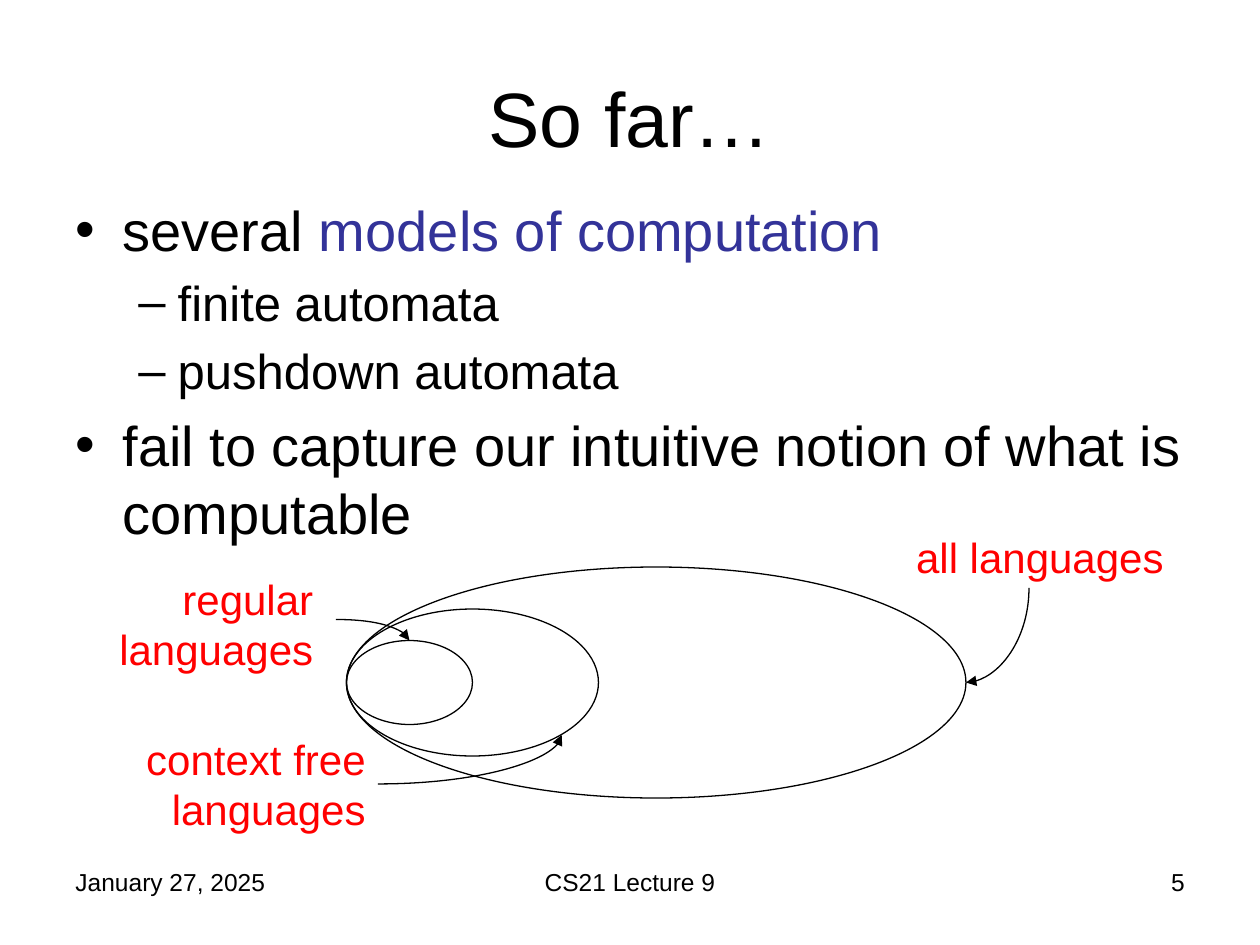
from dataclasses import dataclass

from lxml import etree
from pptx import Presentation
from pptx import util as u
from pptx.dml.color import RGBColor
from pptx.enum import shapes, text
from pptx.oxml import ns


@dataclass(frozen=True)
class Theme:
    font: str = "Arial"
    ink: str = "000000"
    accent: str = "333399"
    label: str = "FF0000"
    title_size: int = 44
    body_size: int = 32
    sub_size: int = 28
    label_size: int = 24
    footer_size: int = 14
    line_width: float = 0.75


THEME = Theme()
LEFT, CENTER, RIGHT = text.PP_ALIGN.LEFT, text.PP_ALIGN.CENTER, text.PP_ALIGN.RIGHT

# level: (bullet, text indent, hanging indent, type size)
LEVELS = {
    0: ("•", 27, -27, THEME.body_size),
    1: ("–", 58.5, -22.5, THEME.sub_size),
}
OUTLINE = [
    (0, [("several ", THEME.ink), ("models of computation", THEME.accent)]),
    (1, [("finite automata", THEME.ink)]),
    (1, [("pushdown automata", THEME.ink)]),
    (0, [("fail to capture our intuitive notion of what is computable", THEME.ink)]),
]
FOOTERS = [
    ("January 27, 2025", LEFT, 36, 168),
    ("CS21 Lecture 9", CENTER, 246, 228),
    ("5", RIGHT, 516, 168),
]
# The nested language classes touch at the left and share a middle line.
SETS_LEFT, SETS_MIDDLE = 198, 390
ALL_LANGUAGES, CONTEXT_FREE, REGULAR = (354, 132), (144, 84), (72, 48)


def apply(target, values):
    for name, value in values.items():
        setattr(target, name, value)


def points(*lengths):
    return [u.Pt(length) for length in lengths]


def sub(parent, tag, **attributes):
    return etree.SubElement(parent, ns.qn(tag), attributes)


def add_frame(slide, box, anchor=text.MSO_ANCHOR.TOP):
    frame = slide.shapes.add_textbox(*points(*box)).text_frame
    apply(frame, {"word_wrap": True, "vertical_anchor": anchor})
    return frame


def add_run(paragraph, words, size, color):
    run = paragraph.add_run()
    run.text = words
    apply(run.font, {"name": THEME.font, "size": u.Pt(size)})
    run.font.color.rgb = RGBColor.from_string(color)


def space_before(paragraph, percent):
    """Set spacing relative to the type size and return the properties."""
    properties = paragraph._p.get_or_add_pPr()
    sub(sub(properties, "a:spcBef"), "a:spcPct", val=str(percent * 1000))
    return properties


def add_line_of_text(slide, words, box, size, align, color=THEME.ink,
                     anchor=text.MSO_ANCHOR.TOP, before=0):
    paragraph = add_frame(slide, box, anchor).paragraphs[0]
    paragraph.alignment = align
    if before:
        space_before(paragraph, before)
    add_run(paragraph, words, size, color)


def add_label(slide, words, box):
    add_line_of_text(slide, words, box, THEME.label_size, RIGHT, THEME.label, before=50)


def add_outline(slide, box):
    frame = add_frame(slide, box)
    for index, (level, pieces) in enumerate(OUTLINE):
        paragraph = frame.add_paragraph() if index else frame.paragraphs[0]
        bullet, margin, hanging, size = LEVELS[level]
        paragraph.level = level
        properties = space_before(paragraph, 20)
        properties.set("marL", str(u.Pt(margin)))
        properties.set("indent", str(u.Pt(hanging)))
        sub(properties, "a:buFont", typeface=THEME.font)
        sub(properties, "a:buChar", char=bullet)
        for words, color in pieces:
            add_run(paragraph, words, size, color)


def style_line(line):
    line.width = u.Pt(THEME.line_width)
    line.color.rgb = RGBColor.from_string(THEME.ink)


def add_set(slide, size):
    width, height = size
    box = points(SETS_LEFT, SETS_MIDDLE - height / 2, width, height)
    ellipse = slide.shapes.add_shape(shapes.MSO_SHAPE.OVAL, *box)
    ellipse.shadow.inherit = False
    ellipse.fill.background()
    style_line(ellipse.line)


def add_pointer(slide, start, end, downward=False):
    """Draw a quarter curve that leaves sideways, or downward by a quarter turn."""
    if downward:
        (x1, y1), (x2, y2) = start, end
        middle_x, middle_y = (x1 + x2) / 2, (y1 + y2) / 2
        half_width, half_height = abs(y2 - y1) / 2, abs(x2 - x1) / 2
        start = middle_x - half_width, middle_y - half_height
        end = middle_x + half_width, middle_y + half_height
    pointer = slide.shapes.add_connector(
        shapes.MSO_CONNECTOR.CURVE, *points(*start, *end))
    style_line(pointer.line)
    properties = pointer._element.spPr
    properties.find(ns.qn("a:prstGeom")).set("prst", "curvedConnector2")
    if downward:
        properties.find(ns.qn("a:xfrm")).set("rot", str(90 * 60000))
    sub(properties.find(ns.qn("a:ln")), "a:tailEnd", type="triangle")
    sub(properties, "a:effectLst")


def main():
    deck = Presentation()
    apply(deck, {"slide_width": u.Pt(720), "slide_height": u.Pt(540)})
    slide = deck.slides.add_slide(deck.slide_layouts[6])

    for words, align, left, width in FOOTERS:
        add_line_of_text(slide, words, (left, 492, width, 37.5), THEME.footer_size, align)
    add_set(slide, ALL_LANGUAGES)
    add_set(slide, CONTEXT_FREE)
    add_line_of_text(slide, "So far…", (36, 21.6, 648, 90), THEME.title_size, CENTER,
                     anchor=text.MSO_ANCHOR.MIDDLE)
    add_outline(slide, (36, 108, 648, 222))
    add_set(slide, REGULAR)

    add_label(slide, "regular languages", (54, 324, 132, 65))
    add_pointer(slide, (192, 354), (234, 366))
    add_label(slide, "context free languages", (48, 415.5, 168, 65))
    add_pointer(slide, (216, 448), (321, 420))
    add_label(slide, "all languages", (504, 300, 168, 36))
    add_pointer(slide, (588, 336), (552, 390), downward=True)

    deck.save("out.pptx")


if __name__ == "__main__":
    main()
